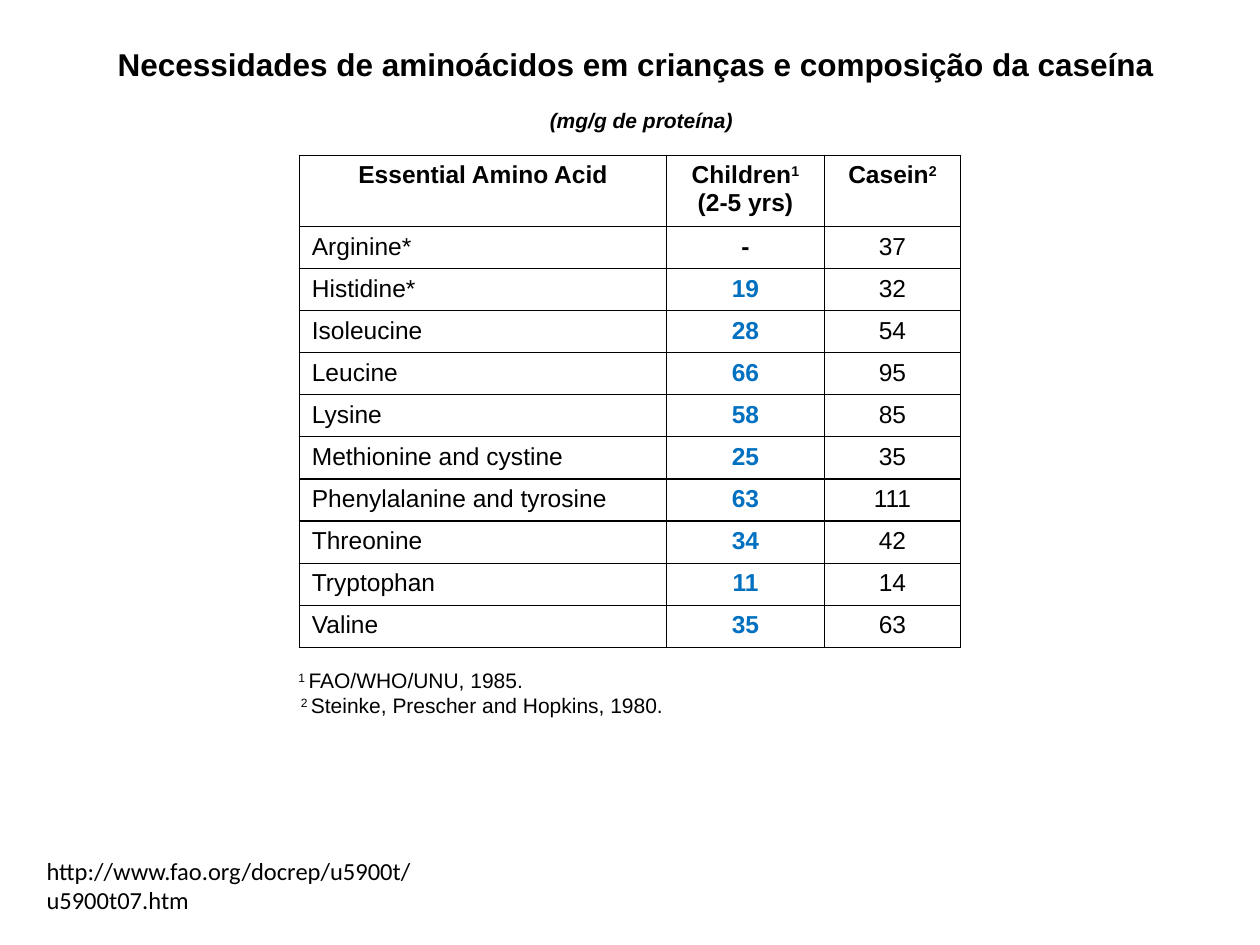
from lxml import etree
from pptx import Presentation
from pptx.dml.color import RGBColor
from pptx.enum.text import MSO_ANCHOR, MSO_AUTO_SIZE, PP_ALIGN
from pptx.oxml.ns import qn
from pptx.util import Pt

LEFT, CENTER = PP_ALIGN.LEFT, PP_ALIGN.CENTER
BLACK, BLUE = "000000", "0070C0"

TITLE = "Necessidades de aminoácidos em crianças e composição da caseína"
UNIT = "(mg/g de proteína)"
HEADERS = ["Essential Amino Acid", "Children^1^\v(2-5 yrs)", "Casein^2^"]
AMINO_ACIDS = [
    ("Arginine*", "-", "37"),
    ("Histidine*", "19", "32"),
    ("Isoleucine", "28", "54"),
    ("Leucine", "66", "95"),
    ("Lysine", "58", "85"),
    ("Methionine and cystine", "25", "35"),
    ("Phenylalanine and tyrosine", "63", "111"),
    ("Threonine", "34", "42"),
    ("Tryptophan", "11", "14"),
    ("Valine", "35", "63"),
]
FOOTNOTES = ["^ 1 ^FAO/WHO/UNU, 1985.", " ^2\u00a0^Steinke, Prescher and Hopkins, 1980."]
ADDRESS = "http://www.fao.org/docrep/u5900t/u5900t07.htm"

COLUMN_WIDTHS = [210, 90, 78]
HEADER_HEIGHT, ROW_HEIGHT = 40.5, 24


def color(hex_string):
    return RGBColor.from_string(hex_string)


def write(paragraph, text, size, font="Arial", bold=False, italic=False,
          fill=BLACK, alignment=LEFT):
    paragraph.alignment = alignment
    paragraph.font.name = font
    paragraph.font.size = Pt(size)
    paragraph.font.bold = bold
    paragraph.font.italic = italic
    paragraph.font.color.rgb = color(fill)
    for index, part in enumerate(text.split("^")):
        for line_number, line in enumerate(part.split("\v")):
            if line_number:
                paragraph.add_line_break()
            if line:
                run = paragraph.add_run()
                run.text = line
                if index % 2:
                    run.font._element.set("baseline", "30000")


def add_text(slide, left, top, width, height, lines, size, font, anchor):
    frame = slide.shapes.add_textbox(Pt(left), Pt(top), Pt(width), Pt(height)).text_frame
    frame.word_wrap = True
    frame.vertical_anchor = anchor
    for index, line in enumerate(lines):
        paragraph = frame.add_paragraph() if index else frame.paragraphs[0]
        write(paragraph, line, size, font)


def outline(cell):
    properties = cell._tc.get_or_add_tcPr()
    for side in ("a:lnL", "a:lnR", "a:lnT", "a:lnB"):
        line = etree.SubElement(properties, qn(side), w=str(Pt(0.75)))
        solid = etree.SubElement(line, qn("a:solidFill"))
        etree.SubElement(solid, qn("a:srgbClr"), val=BLACK)
    cell.fill.background()


def add_title(slide):
    title = slide.shapes.title
    title.left, title.top, title.width, title.height = Pt(60), Pt(20), Pt(613), Pt(94)
    frame = title.text_frame
    frame.auto_size = MSO_AUTO_SIZE.NONE
    frame.word_wrap = True
    frame.vertical_anchor = MSO_ANCHOR.TOP
    frame.margin_top = Pt(5.5)
    write(frame.paragraphs[0], TITLE, 18, bold=True)
    unit = frame.add_paragraph()
    unit.space_before = Pt(14.5)
    write(unit, UNIT, 12, bold=True, italic=True, alignment=CENTER)


def add_amino_acid_table(slide):
    rows = [HEADERS] + AMINO_ACIDS
    height = HEADER_HEIGHT + ROW_HEIGHT * len(AMINO_ACIDS)
    table = slide.shapes.add_table(len(rows), len(HEADERS), Pt(171), Pt(88.6),
                                   Pt(sum(COLUMN_WIDTHS)), Pt(height)).table
    table.first_row = table.horz_banding = False
    for column, width in zip(table.columns, COLUMN_WIDTHS):
        column.width = Pt(width)
    for row_index, values in enumerate(rows):
        header = row_index == 0
        table.rows[row_index].height = Pt(HEADER_HEIGHT if header else ROW_HEIGHT)
        for column_index, value in enumerate(values):
            cell = table.cell(row_index, column_index)
            outline(cell)
            children = column_index == 1
            write(cell.text_frame.paragraphs[0], value, 14,
                  bold=header or children,
                  fill=BLUE if children and value.isdigit() else BLACK,
                  alignment=CENTER if header or column_index else LEFT)


def main():
    presentation = Presentation()
    presentation.slide_width, presentation.slide_height = Pt(720), Pt(540)
    slide = presentation.slides.add_slide(presentation.slide_layouts[5])
    add_text(slide, 19.5, 485.5, 289, 24, [ADDRESS], 14, "Calibri", MSO_ANCHOR.TOP)
    add_title(slide)
    add_amino_acid_table(slide)
    add_text(slide, 161.5, 378, 238, 36, FOOTNOTES, 12, "Arial", MSO_ANCHOR.MIDDLE)
    presentation.save("out.pptx")


if __name__ == "__main__":
    main()
